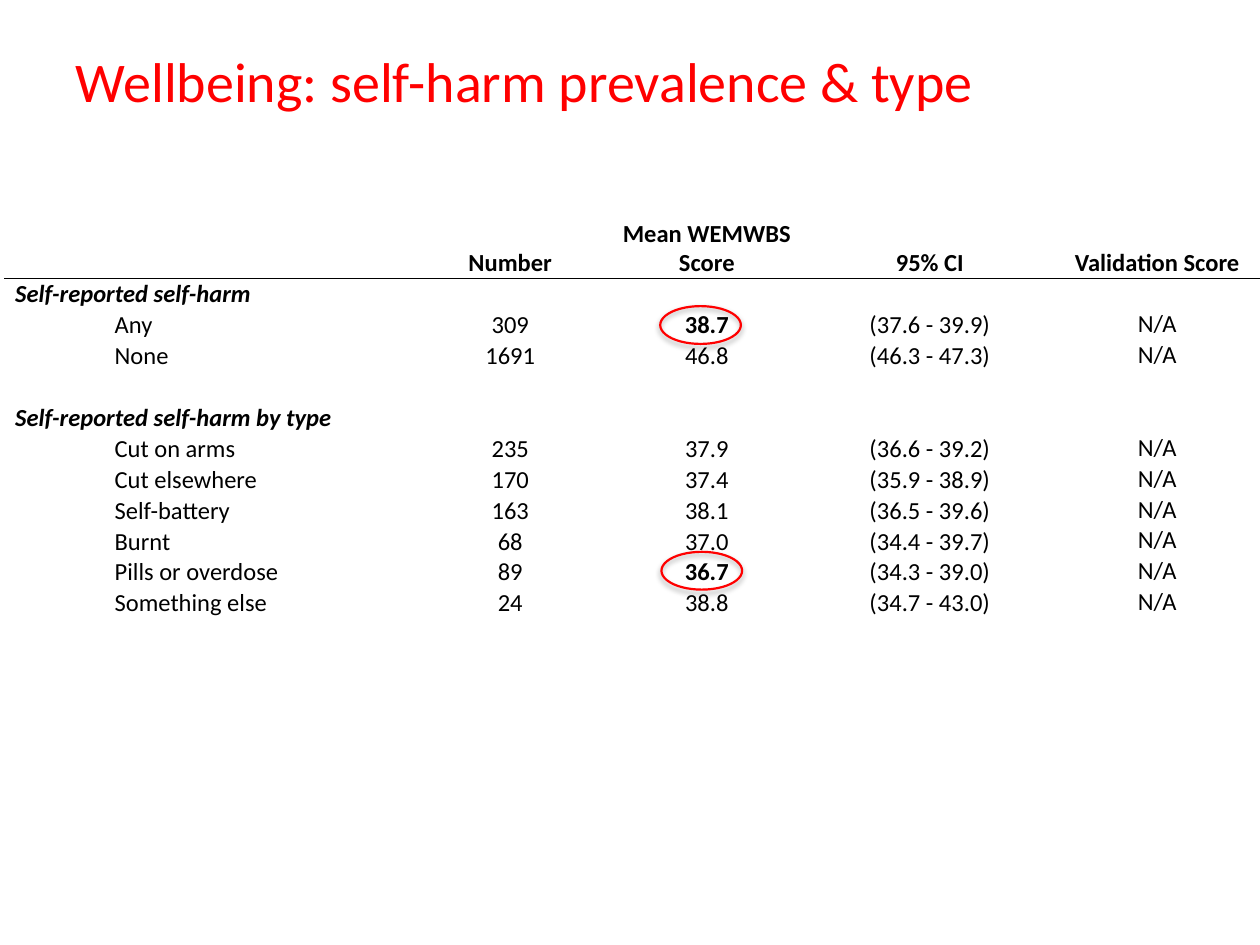
from lxml import etree
from pptx import Presentation
from pptx.dml.color import RGBColor
from pptx.enum.shapes import MSO_SHAPE
from pptx.enum.text import MSO_ANCHOR, PP_ALIGN
from pptx.oxml import parse_xml
from pptx.oxml.ns import nsdecls, qn
from pptx.util import Inches, Pt

RED = RGBColor(0xFF, 0x00, 0x00)
BLACK = RGBColor(0x00, 0x00, 0x00)
OVAL = MSO_SHAPE.OVAL
LEFT, CENTER = PP_ALIGN.LEFT, PP_ALIGN.CENTER
TOP, MIDDLE, BOTTOM = MSO_ANCHOR.TOP, MSO_ANCHOR.MIDDLE, MSO_ANCHOR.BOTTOM

COLUMNS = [0.79, 2.44, 1.56, 1.56, 1.98, 1.63]
HEADER_HEIGHT, TABLE_HEIGHT = 0.57, 3.27
ROWS = [
    ["", "", "Number", "Mean WEMWBS Score", "95% CI", "Validation Score"],
    ["Self-reported self-harm"],
    ["", "Any", "309", "38.7", "(37.6 - 39.9)", "N/A"],
    ["", "None", "1691", "46.8", "(46.3 - 47.3)", "N/A"],
    [""],
    ["Self-reported self-harm by type"],
    ["", "Cut on arms", "235", "37.9", "(36.6 - 39.2)", "N/A"],
    ["", "Cut elsewhere", "170", "37.4", "(35.9 - 38.9)", "N/A"],
    ["", "Self-battery", "163", "38.1", "(36.5 - 39.6)", "N/A"],
    ["", "Burnt", "68", "37.0", "(34.4 - 39.7)", "N/A"],
    ["", "Pills or overdose", "89", "36.7", "(34.3 - 39.0)", "N/A"],
    ["", "Something else", "24", "38.8", "(34.7 - 43.0)", "N/A"],
]
HIGHLIGHTS = {"38.7", "36.7"}


class SlideBuilder:
    """Adds styled elements to the current slide."""

    font = "Calibri"
    table_size = 14

    def __init__(self, prs):
        self.s = prs.slides.add_slide(prs.slide_layouts[5])

    def text(self, tf, text, size, color, align=LEFT, bold=False, italic=False):
        p = tf.paragraphs[0]
        p.alignment = align
        r = p.add_run()
        r.text = text
        r.font.name, r.font.size = self.font, Pt(size)
        r.font.bold, r.font.italic = bold, italic
        r.font.color.rgb = color

    def title(self, text, x, y, w, h):
        sp = self.s.shapes.title
        sp.left, sp.top, sp.width, sp.height = map(Inches, (x, y, w, h))
        sp.text_frame.vertical_anchor = MIDDLE
        self.text(sp.text_frame, text, 32, RED)

    def border(self, cell, side):
        cell._tc.get_or_add_tcPr().insert(0, parse_xml(
            f'<a:{side} {nsdecls("a")} w="{Pt(1)}"><a:solidFill>'
            f'<a:srgbClr val="{BLACK}"/></a:solidFill></a:{side}>'))

    def cell(self, cell, text, align, anchor, bold, italic):
        cell.fill.background()
        cell.margin_left = cell.margin_right = Inches(0.08)
        cell.margin_top = cell.margin_bottom = 0
        cell.vertical_anchor = anchor
        if text:
            self.text(cell.text_frame, text, self.table_size, BLACK,
                      align, bold, italic)
        else:
            p = cell.text_frame.paragraphs[0]
            etree.SubElement(p._p, qn("a:endParaRPr"), sz=str(self.table_size * 100))

    def table(self, x, y):
        table = self.s.shapes.add_table(
            len(ROWS), len(COLUMNS), Inches(x), Inches(y),
            Inches(sum(COLUMNS)), Inches(TABLE_HEIGHT)).table
        table.first_row = table.horz_banding = False
        for column, width in zip(table.columns, COLUMNS):
            column.width = Inches(width)
        row_height = (TABLE_HEIGHT - HEADER_HEIGHT) / (len(ROWS) - 1)
        last = len(COLUMNS) - 1
        for i, row in enumerate(ROWS):
            table.rows[i].height = Inches(row_height if i else HEADER_HEIGHT)
            section = len(row) == 1
            if section:
                table.cell(i, 0).merge(table.cell(i, last))
            for j in range(len(COLUMNS)):
                text = row[j] if j < len(row) else ""
                self.cell(table.cell(i, j), text,
                          CENTER if j > 1 else LEFT,
                          TOP if i and j == last else BOTTOM,
                          i == 0 or section or text in HIGHLIGHTS, section)
        for j in range(len(COLUMNS)):
            self.border(table.cell(0, j), "lnB")
            self.border(table.cell(1, j), "lnT")

    def ring(self, x, y):
        sp = self.s.shapes.add_shape(OVAL, Inches(x), Inches(y),
                                     Inches(0.64), Inches(0.3))
        sp.fill.background()
        sp.line.color.rgb = RED
        sp.line.width = Pt(1.25)
        sp.shadow.inherit = False
        effects = sp._element.spPr.find(qn("a:effectLst"))
        effects.append(parse_xml(
            f'<a:outerShdw {nsdecls("a")} blurRad="{Pt(3.1)}" dist="{Pt(1.8)}" '
            f'dir="5400000" rotWithShape="0"><a:srgbClr val="{BLACK}">'
            '<a:alpha val="35000"/></a:srgbClr></a:outerShdw>'))


def main():
    prs = Presentation()
    prs.slide_width, prs.slide_height = Inches(10), Inches(7.5)
    slide = SlideBuilder(prs)
    slide.title("Wellbeing: self-harm prevalence & type", 0.5, 0.21, 9, 0.85)
    slide.table(0.04, 1.64)
    slide.ring(5.24, 2.43)
    slide.ring(5.25, 4.38)
    prs.save("out.pptx")


if __name__ == "__main__":
    main()
